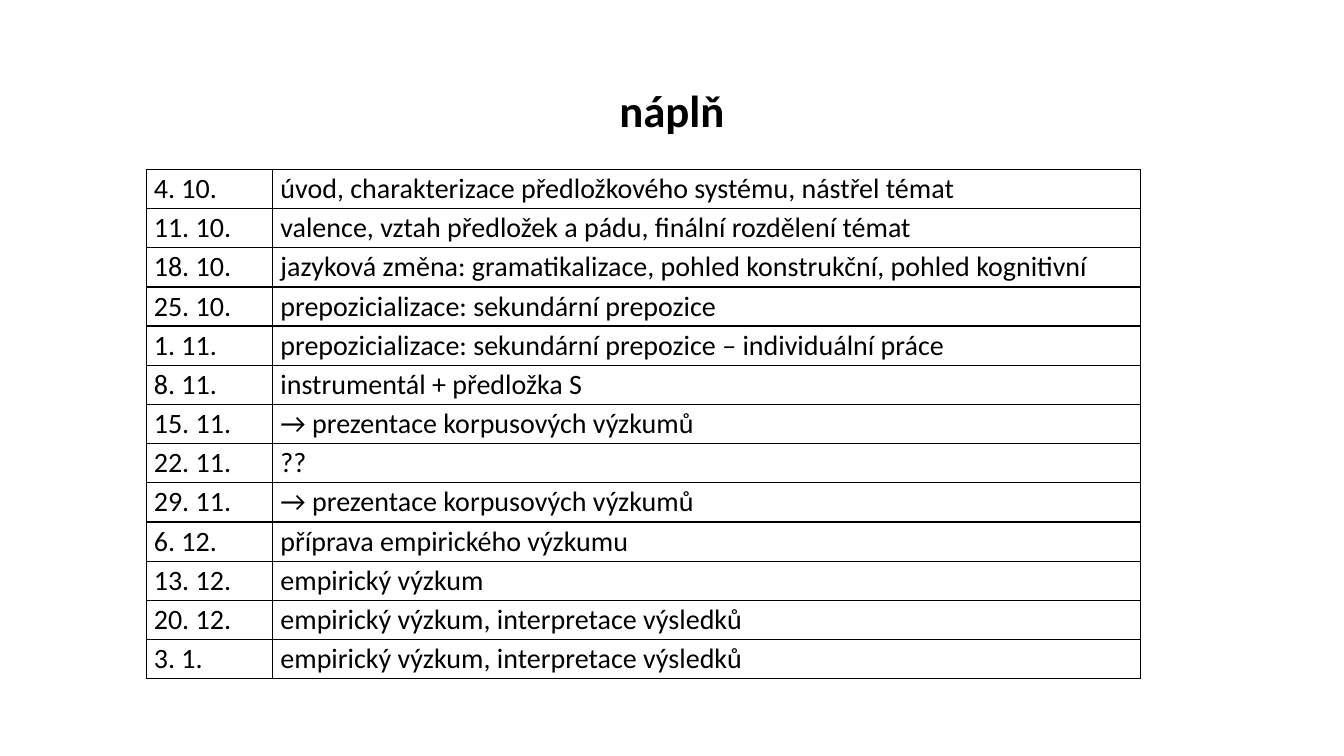
from dataclasses import dataclass

from lxml.etree import SubElement
from pptx import Presentation
from pptx.dml.color import RGBColor
from pptx.enum.text import MSO_ANCHOR as Anchor, PP_ALIGN as Align
from pptx.oxml.ns import qn
from pptx.util import Pt

TITLE = "náplň"
SCHEDULE = [
    ("4. 10.", "úvod, charakterizace předložkového systému, nástřel témat"),
    ("11. 10.", "valence, vztah předložek a pádu, finální rozdělení témat"),
    ("18. 10.", "jazyková změna: gramatikalizace, pohled konstrukční, pohled kognitivní"),
    ("25. 10.", "prepozicializace: sekundární prepozice"),
    ("1. 11.", "prepozicializace: sekundární prepozice – individuální práce"),
    ("8. 11.", "instrumentál + předložka S"),
    ("15. 11.", "→ prezentace korpusových výzkumů"),
    ("22. 11.", "??"),
    ("29. 11.", "→ prezentace korpusových výzkumů"),
    ("6. 12.", "příprava empirického výzkumu"),
    ("13. 12.", "empirický výzkum"),
    ("20. 12.", "empirický výzkum, interpretace výsledků"),
    ("3. 1.", "empirický výzkum, interpretace výsledků"),
]


@dataclass(frozen=True)
class Theme:
    font: str = "Calibri"
    ink: str = "000000"
    title_size: int = 32
    table_size: int = 20
    border_width: int = 1


THEME = Theme()
SLIDE_SIZE = (960, 540)
TITLE_BOX = (66, 28.75, 828, 104.4)
TABLE_ORIGIN = (104.5, 121)
COLUMN_WIDTHS = (90.4, 619.5)
ROW_HEIGHT = 28
CELL_MARGIN = 5.4


def write(text_frame, text, size, spacing, bold=False, align=Align.LEFT):
    text_frame.text = text
    paragraph = text_frame.paragraphs[0]
    paragraph.alignment = align
    paragraph.line_spacing = spacing
    font = paragraph.runs[0].font
    font.name = THEME.font
    font.size = Pt(size)
    font.bold = bold
    font.color.rgb = RGBColor.from_string(THEME.ink)


def add_borders(cell):
    properties = cell._tc.get_or_add_tcPr()
    for side in ("a:lnL", "a:lnR", "a:lnT", "a:lnB"):
        line = SubElement(properties, qn(side), w=str(Pt(THEME.border_width)))
        fill = SubElement(line, qn("a:solidFill"))
        SubElement(fill, qn("a:srgbClr"), val=THEME.ink)


def add_title(slide):
    shape = slide.shapes.add_textbox(*map(Pt, TITLE_BOX))
    text_frame = shape.text_frame
    text_frame.word_wrap = True
    text_frame.vertical_anchor = Anchor.MIDDLE
    write(text_frame, TITLE, THEME.title_size, 0.9, True, Align.CENTER)


def add_schedule(slide):
    size = (sum(COLUMN_WIDTHS), ROW_HEIGHT * len(SCHEDULE))
    table = slide.shapes.add_table(
        len(SCHEDULE), len(COLUMN_WIDTHS), *map(Pt, TABLE_ORIGIN + size)
    ).table
    table.first_row = False
    table.horz_banding = False
    for column, width in zip(table.columns, COLUMN_WIDTHS):
        column.width = Pt(width)
    for row, entry in zip(table.rows, SCHEDULE):
        row.height = Pt(ROW_HEIGHT)
        for cell, text in zip(row.cells, entry):
            cell.margin_left = cell.margin_right = Pt(CELL_MARGIN)
            cell.margin_top = cell.margin_bottom = Pt(0)
            add_borders(cell)
            cell.fill.background()
            write(cell.text_frame, text, THEME.table_size, 1.07)


def main():
    presentation = Presentation()
    presentation.slide_width, presentation.slide_height = map(Pt, SLIDE_SIZE)
    slide = presentation.slides.add_slide(presentation.slide_layouts[6])
    add_title(slide)
    add_schedule(slide)
    presentation.save("out.pptx")


if __name__ == "__main__":
    main()
